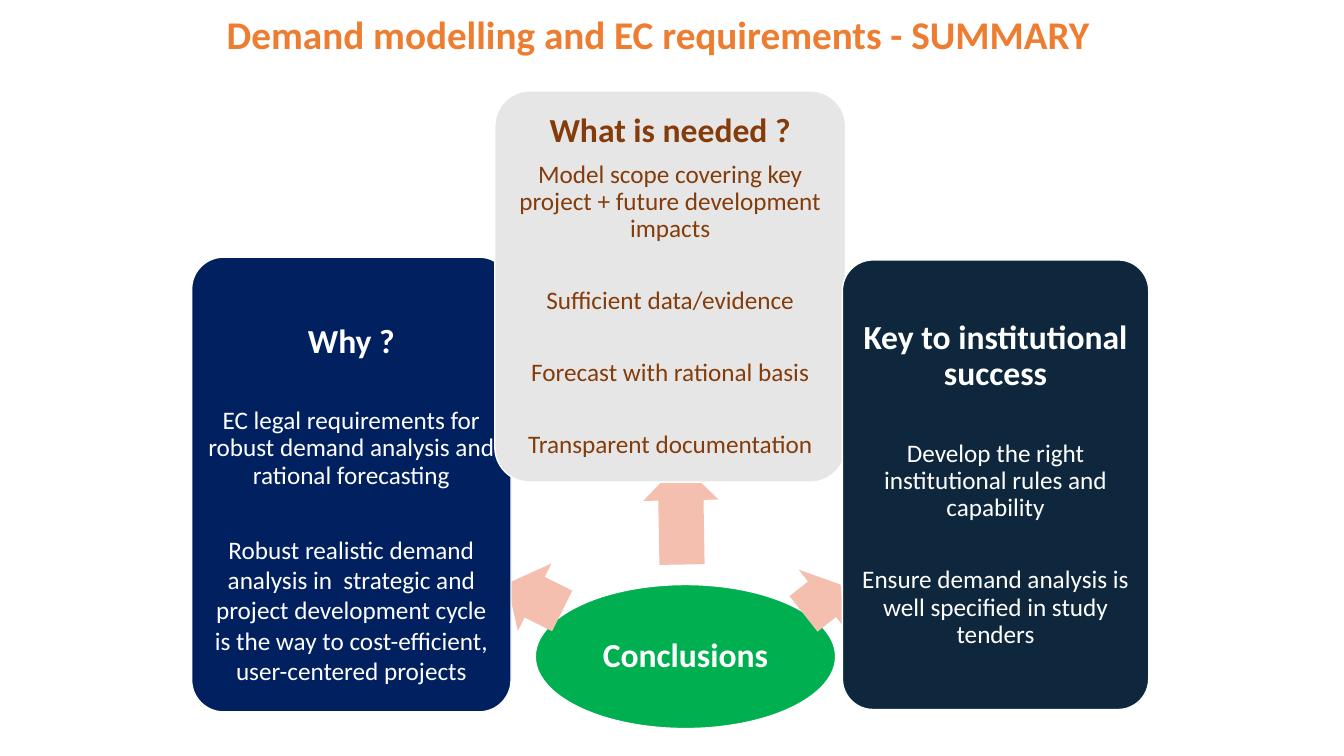
from dataclasses import dataclass

from pptx import Presentation
from pptx.dml.color import RGBColor
from pptx.enum.shapes import MSO_SHAPE
from pptx.enum.text import MSO_ANCHOR, MSO_AUTO_SIZE, PP_ALIGN
from pptx.shapes.autoshape import Shape
from pptx.slide import Slide
from pptx.text.text import _Paragraph as Paragraph
from pptx.util import Cm, Pt

COLOURS = {
    "title": "ED7D31", "white": "FFFFFF", "brown": "843C0B", "green": "00B050",
    "navy": "002060", "grey": "E7E6E6", "slate": "0F273D", "arrow": "F4BFAE",
}
FONT = "Calibri"
HEADING_SIZE, POINT_SIZE = 24, 18
POINT_GAP = 32


@dataclass(frozen=True)
class Box:
    left: float
    top: float
    width: float
    height: float


@dataclass(frozen=True)
class Arrow:
    box: Box
    rotation: float


@dataclass(frozen=True)
class Card:
    box: Box
    fill: str
    ink: str
    heading: str
    points: tuple[str, ...]
    heading_gap: float = 34
    top_inset: float = 0.13
    last_line_spacing: float = 0.9


CONCLUSIONS = Card(Box(13.49, 14.73, 7.57, 3.63), "green", "white", "Conclusions", ())

WHY = Card(
    Box(4.83, 6.48, 8.05, 11.46), "navy", "white", "Why ?",
    ("EC legal requirements for robust demand analysis and rational forecasting",
     "Robust realistic demand analysis in  strategic and project development cycle "
     "is the way to cost-efficient, user-centered projects"),
    top_inset=1.15, last_line_spacing=1.0,
)

NEEDED = Card(
    Box(12.47, 2.29, 8.84, 9.86), "grey", "brown", "What is needed ?",
    ("Model scope covering key project + future development impacts",
     "Sufficient data/evidence",
     "Forecast with rational basis",
     "Transparent documentation"),
    heading_gap=8,
)

SUCCESS = Card(
    Box(21.23, 6.55, 7.72, 11.33), "slate", "white", "Key to institutional success",
    ("Develop the right institutional rules and capability",
     "Ensure demand analysis is well specified in study tenders"),
)

# Each arrow lies behind the card it points to.
BRANCHES = (
    (Arrow(Box(12.7, 14.1, 1.55, 1.9), 26.5), WHY),
    (Arrow(Box(15.88, 11.99, 2.57, 1.9), 89), NEEDED),
    (Arrow(Box(20.12, 14.15, 1.19, 1.9), 141.7), SUCCESS),
)


def colour(name: str) -> RGBColor:
    return RGBColor.from_string(COLOURS[name])


def write(paragraph: Paragraph, text: str, size: float, ink: str, bold: bool,
          gap: float = 0, line_spacing: float = 0.9) -> None:
    paragraph.text = text
    paragraph.alignment = PP_ALIGN.CENTER
    paragraph.line_spacing = line_spacing
    paragraph.space_before = Pt(gap)
    for run in paragraph.runs:
        run.font.name = FONT
        run.font.size = Pt(size)
        run.font.bold = bold
        run.font.color.rgb = colour(ink)


def add_filled(slide: Slide, kind: MSO_SHAPE, box: Box, fill: str) -> Shape:
    shape = slide.shapes.add_shape(
        kind, Cm(box.left), Cm(box.top), Cm(box.width), Cm(box.height))
    shape.shadow.inherit = False
    shape.fill.solid()
    shape.fill.fore_color.rgb = colour(fill)
    return shape


def add_arrow(slide: Slide, arrow: Arrow) -> None:
    pointer = add_filled(slide, MSO_SHAPE.LEFT_ARROW, arrow.box, "arrow")
    pointer.adjustments[0] = 0.6
    pointer.adjustments[1] = 0.5
    pointer.rotation = arrow.rotation
    pointer.line.fill.background()


def add_card(slide: Slide, card: Card, kind: MSO_SHAPE) -> None:
    panel = add_filled(slide, kind, card.box, card.fill)
    panel.line.color.rgb = colour("white")
    panel.line.width = Pt(1)
    if kind == MSO_SHAPE.ROUNDED_RECTANGLE:
        panel.adjustments[0] = 0.1
    frame = panel.text_frame
    frame.word_wrap = True
    frame.vertical_anchor = MSO_ANCHOR.MIDDLE
    frame.margin_left = frame.margin_right = frame.margin_bottom = Cm(0.13)
    frame.margin_top = Cm(card.top_inset)
    write(frame.paragraphs[0], card.heading, HEADING_SIZE, card.ink, bold=True)
    for index, point in enumerate(card.points):
        gap = POINT_GAP if index else card.heading_gap
        is_last = index == len(card.points) - 1
        write(frame.add_paragraph(), point, POINT_SIZE, card.ink, bold=False, gap=gap,
              line_spacing=card.last_line_spacing if is_last else 0.9)


def add_title(slide: Slide, text: str) -> None:
    title = slide.shapes.title
    title.left, title.top, title.width, title.height = Cm(0.3), Cm(0), Cm(32.56), Cm(1.6)
    title.text_frame.auto_size = MSO_AUTO_SIZE.NONE
    title.text_frame.vertical_anchor = MSO_ANCHOR.BOTTOM
    write(title.text_frame.paragraphs[0], text, 28, "title", bold=True)


def main() -> None:
    presentation = Presentation()
    presentation.slide_width, presentation.slide_height = Cm(33.87), Cm(19.05)
    slide = presentation.slides.add_slide(presentation.slide_layouts[5])
    add_title(slide, "Demand modelling and EC requirements - SUMMARY")
    add_card(slide, CONCLUSIONS, MSO_SHAPE.OVAL)
    for arrow, card in BRANCHES:
        add_arrow(slide, arrow)
        add_card(slide, card, MSO_SHAPE.ROUNDED_RECTANGLE)
    presentation.save("out.pptx")


if __name__ == "__main__":
    main()
